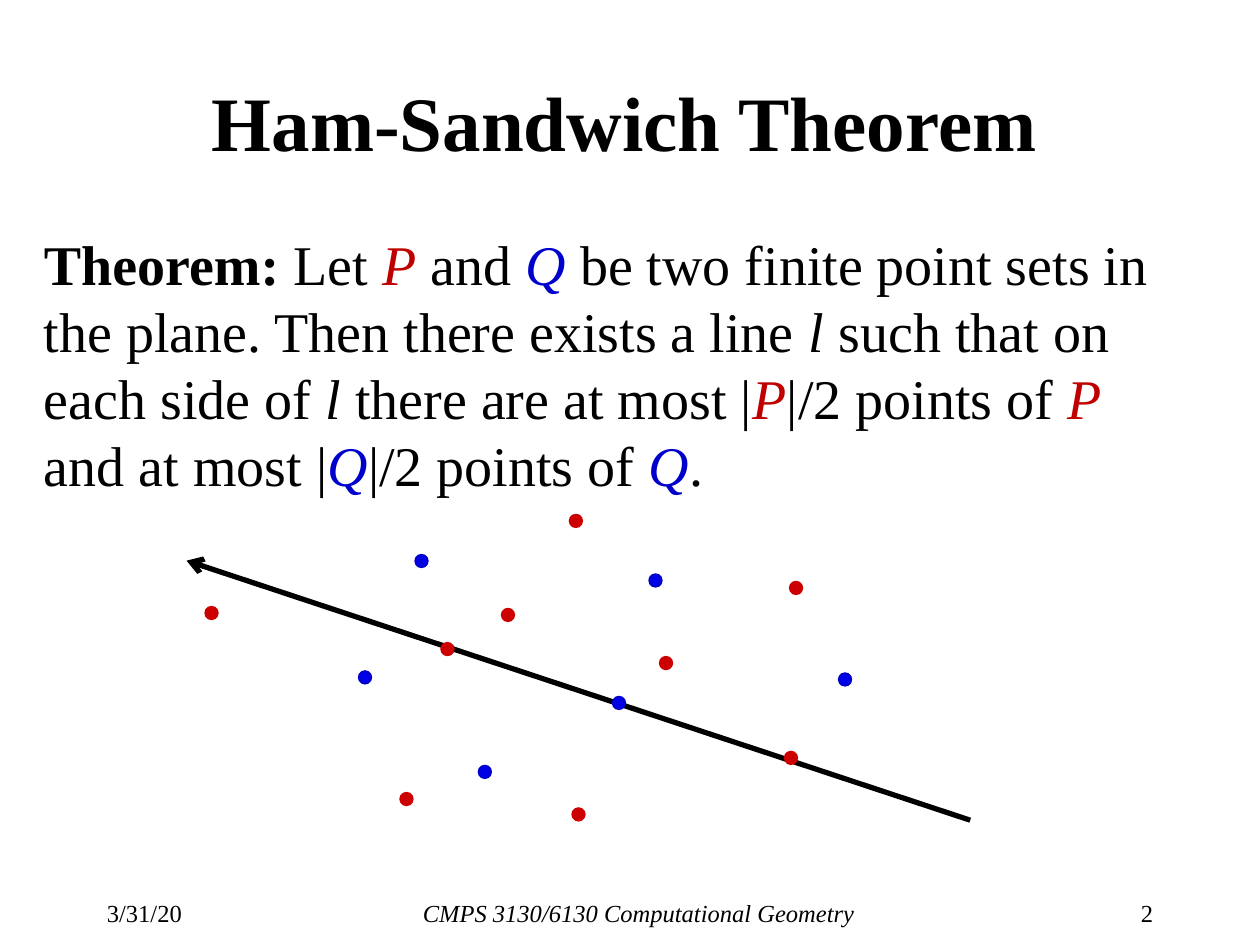
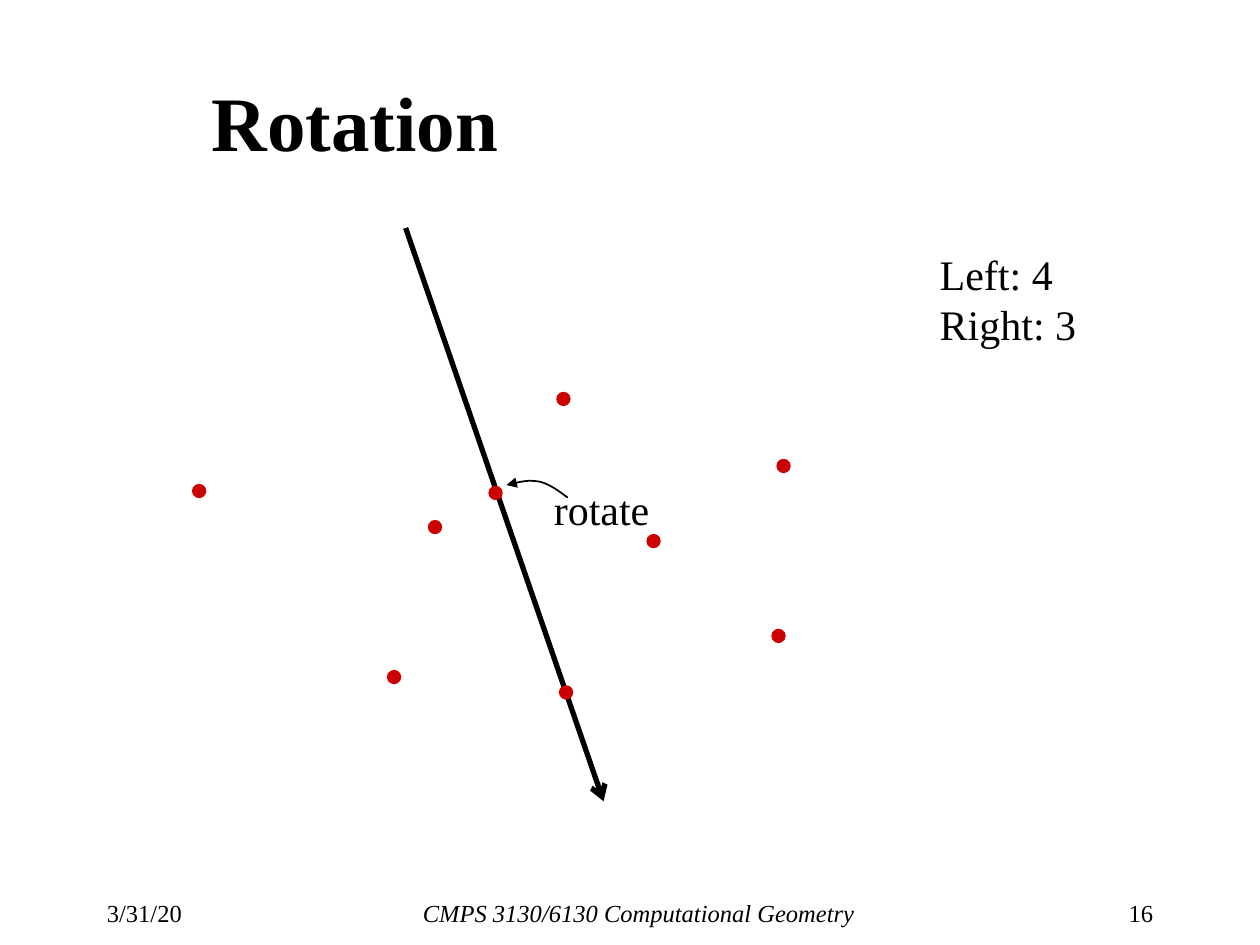
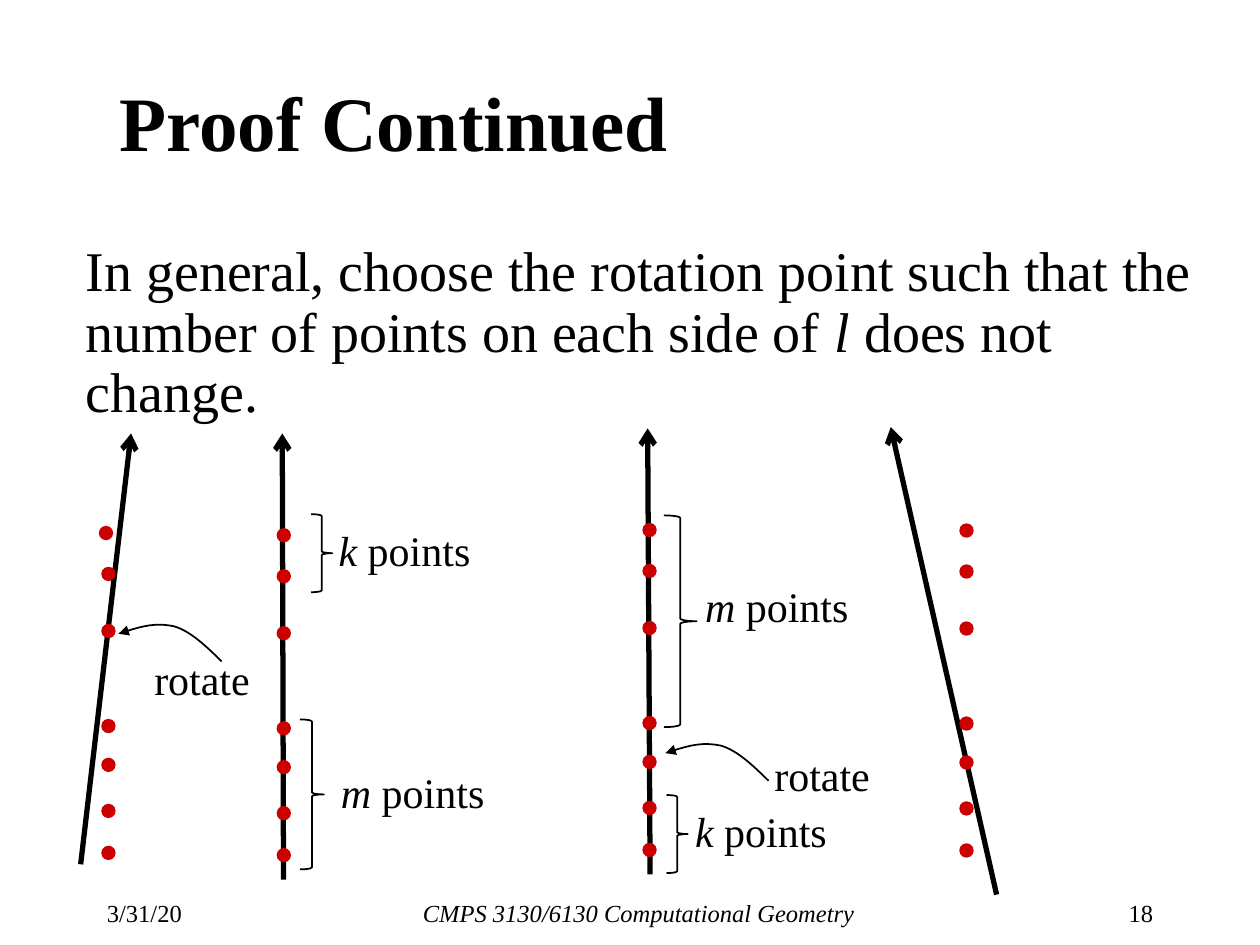
from pptx import Presentation as Deck
from pptx.dml.color import RGBColor as Rgb
from pptx.enum.shapes import MSO_CONNECTOR as Conn, MSO_SHAPE as Kind
from pptx.enum.text import MSO_ANCHOR as Anchor, MSO_AUTO_SIZE as Auto, PP_ALIGN as Align
from pptx.oxml.ns import qn
from pptx.oxml.xmlchemy import OxmlElement as Node
from pptx.util import Pt

BLACK, RED, BLUE, DEEP = "000000", "CC0000", "0000E6", "0000CC"

# Words set between asterisks: italic unless listed here
MARKS = {
    "Theorem: ": {"bold": True},
    "P": {"italic": True, "color": "C00000"},
    "Q": {"italic": True, "color": DEEP},
}

# Point sets, as centres
P = [(232.3, 456.6), (330.6, 465.4), (380.6, 378.9), (452, 433.1), (329.1, 297.7),
     (454.9, 336), (255.7, 370.9), (120.9, 350.3), (290.3, 351.4)]
Q = [(277.1, 441.1), (353.7, 401.7), (208.6, 387.1), (482.9, 388.3),
     (240.9, 320.6), (374.6, 331.7)]
STACK = [304.6, 328, 360.6, 414.9, 437.1, 463.4, 487.4]

# Two Bezier pieces of the rotation arrow, in a unit frame
BEND = [(0, 0), (0.18, -0.23), (0.36, -0.41), (0.54, -0.27),
        (0.7, -0.09), (0.85, 0.45), (1, 1)]


def tint(code):
    return Rgb.from_string(code)


def box(*sizes):
    return [Pt(size) for size in sizes]


class Page:
    """Holds the style and the current slide."""
    font = "Times New Roman"
    dot = 7.2

    def __init__(self):
        self.deck = Deck()
        self.deck.slide_width, self.deck.slide_height = box(720, 540)

    def start(self, title, num, left=113.8):
        self.slide = self.deck.slides.add_slide(self.deck.slide_layouts[5])
        self.shapes = self.slide.shapes
        head = self.shapes.title
        head.left, head.top, head.width, head.height = box(left, 23.8, 594, 90)
        self.fill(head, f"*{title}*", 44, Align.LEFT, anchor=Anchor.MIDDLE,
                  mark={"bold": True})
        # Footer
        self.text("3/31/20", 54, 509.8, 68.4, 18, 14)
        self.text("*CMPS 3130/6130 Computational Geometry*", 136.8, 509.8, 456.5, 18,
                  14, Align.CENTER)
        self.text(str(num), 607, 509.8, 59, 18, 14, Align.RIGHT)

    def fill(self, shape, words, size, align, wrap=True, anchor=Anchor.TOP,
             mark=None, space=None):
        frame = shape.text_frame
        form = {"auto_size": Auto.NONE, "word_wrap": wrap, "vertical_anchor": anchor}
        for name, value in form.items():
            setattr(frame, name, value)
        para = frame.paragraphs[0]
        for name, value in {"alignment": align, **(space or {})}.items():
            setattr(para, name, value)
        for i, part in enumerate(words.split("*")):
            look = {}
            if i % 2:
                look = mark or MARKS.get(part, {"italic": True})
            for j, line in enumerate(part.split("\n")):
                if j:
                    para.add_line_break()
                if line:
                    self.run(para, line, size, **look)

    def run(self, para, words, size, color=BLACK, **look):
        run = para.add_run()
        run.text = words
        form = {"name": self.font, "size": Pt(size), "bold": False, "italic": False}
        for name, value in {**form, **look}.items():
            setattr(run.font, name, value)
        run.font.color.rgb = tint(color)

    def text(self, words, x, y, w, h, size, align=Align.LEFT, **form):
        shape = self.shapes.add_textbox(*box(x, y, w, h))
        self.fill(shape, words, size, align, **form)

    def label(self, words, x, y, w, h=36, align=Align.CENTER):
        self.text(words, x, y, w, h, 24, align, wrap=False)

    def stroke(self, shape, color=BLACK, width=1, end=None, kind="arrow"):
        shape.line.color.rgb = tint(color)
        shape.line.width = Pt(width)
        if end:
            tip = Node(f"a:{end}")
            tip.set("type", kind)
            shape.line._get_or_add_ln().append(tip)

    def arrow(self, x1, y1, x2, y2):
        line = self.shapes.add_connector(Conn.STRAIGHT, *box(x1, y1, x2, y2))
        self.stroke(line, width=3, end="tailEnd")
        line.element.spPr.append(Node("a:effectLst"))

    def dots(self, spots, color=RED, edge=RED, dx=0, dy=0):
        half = self.dot / 2
        for x, y in spots:
            dot = self.shapes.add_shape(
                Kind.OVAL, *box(x + dx - half, y + dy - half, self.dot, self.dot))
            dot.shadow.inherit = False
            dot.fill.solid()
            dot.fill.fore_color.rgb = tint(color)
            self.stroke(dot, edge)

    def brace(self, *place):
        brace = self.shapes.add_shape(Kind.RIGHT_BRACE, *box(*place))
        brace.shadow.inherit = False
        brace.fill.background()
        self.stroke(brace)

    def curve(self, x, y, w, h):
        spots = [box(x + w * u, y + h * v) for u, v in BEND]
        pen = self.shapes.build_freeform(*spots[0])
        pen.add_line_segments(spots[1:], close=False)
        curve = pen.convert_to_shape()
        # Every three line pieces become one Bezier piece
        legs = list(curve.element.iter(qn("a:lnTo")))
        for i in range(0, len(legs), 3):
            bend = Node("a:cubicBezTo")
            legs[i].addprevious(bend)
            for leg in legs[i:i + 3]:
                bend.append(leg[0])
                leg.getparent().remove(leg)
        curve.shadow.inherit = False
        curve.fill.background()
        self.stroke(curve, end="headEnd", kind="triangle")


def theorem(page):
    page.start("Ham-Sandwich Theorem", 2)
    page.text("*Theorem: *Let *P* and *Q* be two finite point sets in the plane. "
              "Then there exists a line *l* such that on each side of *l* there are "
              "at most |*P*|/2 points of *P* and at most |*Q*|/2 points of *Q*.",
              18, 127.4, 668.9, 162.7, 32)
    page.arrow(554.4, 468.7, 106.6, 320.4)
    page.dots(P)
    page.dots(Q, BLUE, DEEP)


def rotation(page):
    page.start("Rotation", 16)
    page.arrow(231.8, 130.3, 344.9, 457.9)
    page.dots(P, dx=-7.1, dy=-69.7)
    page.label("Left: 4\nRight: 3", 529.9, 138.2, 92.9, 65.5, Align.LEFT)
    page.curve(289.4, 277.2, 35, 7.2)
    page.label("rotate", 308.9, 272.9, 69.8)


def proof(page):
    page.start("Proof Continued", 18, 61.2)
    page.text("In general, choose the rotation point such that the number of points "
              "on each side of *l* does not change.", 41.8, 135.4, 654.5, 375.8, 32,
              space={"line_spacing": 0.9, "space_before": Pt(6.4)})
    # Four positions of the line: arrow, column centre, drop, nudge of top point
    for line, x, drop, nudge in [
        ((46.1, 493.9, 74.9, 247.7), 62, 0, -1.4),
        ((162, 502.6, 161.3, 247.7), 162.2, 1.3, 0),
        ((371.5, 499.7, 370.1, 244.8), 371.2, -1.7, 0),
        ((569.5, 511.2, 509, 244.1), 552.3, -1.4, 0),
    ]:
        page.arrow(*line)
        page.dots([(x + (0 if i else nudge), y) for i, y in enumerate(STACK)], dy=drop)
    # Braces with their counts
    for place, words, x, y, w in [
        ((177.8, 293.8, 12.2, 44.6), "*k* points", 185.8, 295.9, 90.7),
        ((171.4, 411.1, 13.7, 85.7), "*m* points", 187.2, 434.2, 97.2),
        ((379.4, 294.5, 18.7, 121), "*m* points", 395.3, 328.3, 97.2),
        ((380.9, 454.3, 12.2, 44.6), "*k* points", 389.5, 456.5, 90.7),
    ]:
        page.brace(*place)
        page.label(words, x, y, w)
    # Rotation arrows
    for x, y, left, top in [(67.7, 362.2, 80.6, 370.1), (380.2, 430.4, 434.9, 424.8)]:
        page.curve(x, y, 59, 15.8)
        page.label("rotate", left, top, 69.8)


def main():
    page = Page()
    for draw in (theorem, rotation, proof):
        draw(page)
    page.deck.save("out.pptx")


if __name__ == "__main__":
    main()
